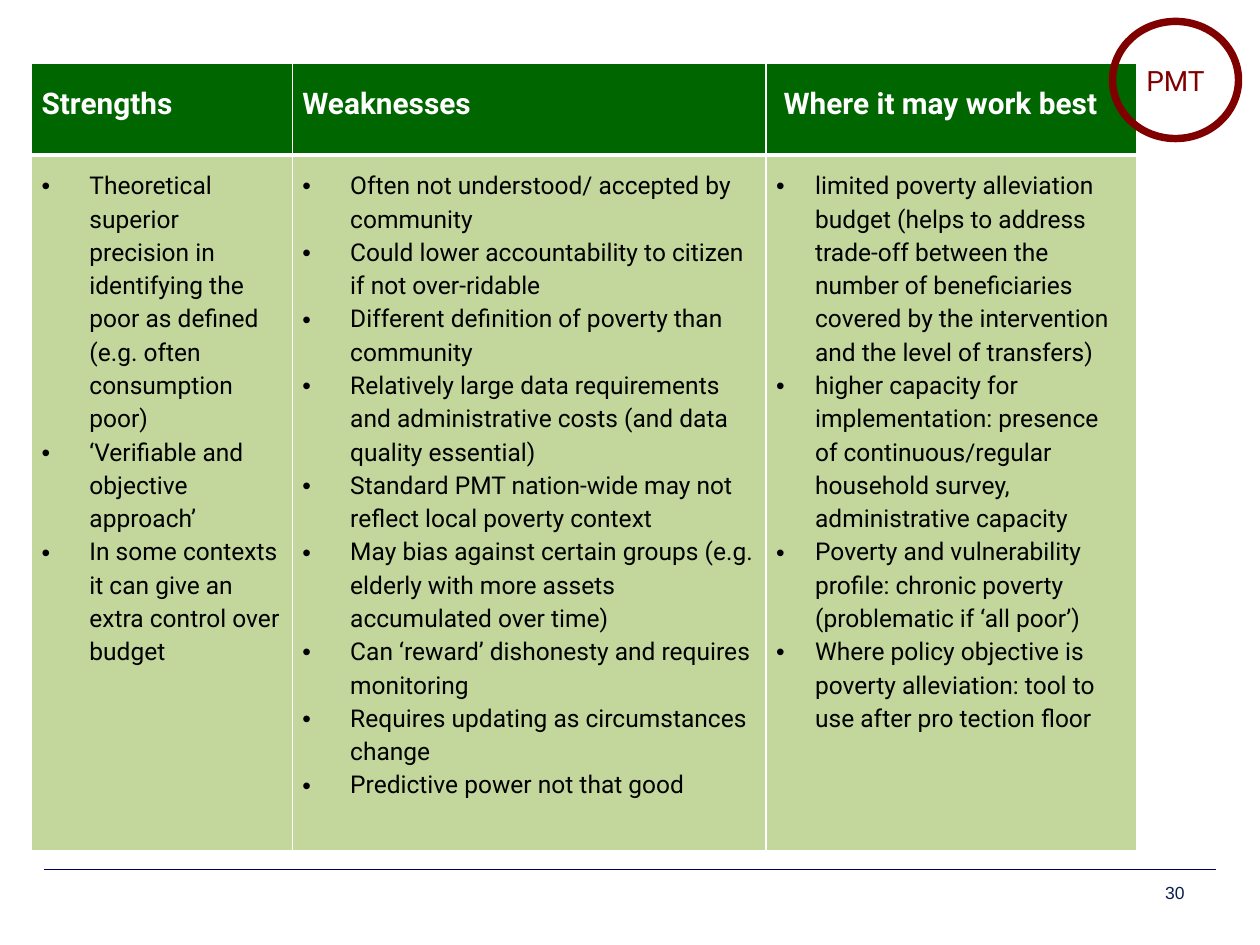
from dataclasses import dataclass

from lxml import etree
from pptx import Presentation
from pptx.dml.color import RGBColor
from pptx.enum.shapes import MSO_CONNECTOR, MSO_SHAPE
from pptx.enum.text import MSO_ANCHOR, PP_ALIGN
from pptx.oxml.ns import qn
from pptx.util import Inches, Pt

OVAL = MSO_SHAPE.OVAL
STRAIGHT = MSO_CONNECTOR.STRAIGHT
MIDDLE = MSO_ANCHOR.MIDDLE
CENTER, RIGHT, JUSTIFY = PP_ALIGN.CENTER, PP_ALIGN.RIGHT, PP_ALIGN.JUSTIFY


@dataclass(frozen=True)
class Theme:
    font: str = "Roboto"
    plain: str = "Arial"
    white: str = "FFFFFF"
    black: str = "000000"
    green: str = "006600"
    pale: str = "C3D69B"
    maroon: str = "800000"
    navy: str = "00005E"
    number: str = "0B1F51"
    head: int = 17
    body: int = 14
    badge: int = 16
    small: int = 10
    spacing: float = 1.15


THEME = Theme()

# Title, column width, hanging indent, points
COLUMNS = [
    ("Strengths", 2.07, 0.38, [
        "Theoretical superior precision in identifying the poor as defined "
        "(e.g. often consumption poor)",
        "‘Verifiable and objective approach’",
        "In some contexts it can give an extra control over budget",
    ]),
    ("Weaknesses", 3.76, 0.38, [
        "Often not understood/ accepted by community",
        "Could lower accountability to citizen if not over-ridable",
        "Different definition of poverty than community",
        "Relatively large data requirements and administrative costs "
        "(and data quality essential)",
        "Standard PMT nation-wide may not reflect local poverty context",
        "May bias against certain groups (e.g. elderly with more assets "
        "accumulated over time)",
        "Can ‘reward’ dishonesty and requires monitoring",
        "Requires updating as circumstances change",
        "Predictive power not that good",
    ]),
    ("Where it may work best", 2.94, 0.31, [
        "limited poverty alleviation budget (helps to address trade-off "
        "between the number of beneficiaries covered by the intervention "
        "and the level of transfers)",
        "higher capacity for implementation: presence of continuous/regular "
        "household survey, administrative capacity",
        "Poverty and vulnerability profile: chronic poverty "
        "(problematic if ‘all poor’)",
        "Where policy objective is poverty alleviation: tool to use after "
        "pro tection floor",
    ]),
]
ROWS = (0.73, 5.52)


def color(code):
    return RGBColor.from_string(code)


def style(para, size, code, face=THEME.font, bold=False):
    font = para.font
    font.name, font.size, font.bold = face, Pt(size), bold
    font.color.rgb = color(code)


def indent(para, left, hang=0):
    props = para._p.get_or_add_pPr()
    props.set("marL", str(Inches(left)))
    props.set("indent", str(Inches(-hang)))
    return props


def border(cell, bottom):
    """Draw white cell edges, 1 pt except for the given bottom width."""
    props = cell._tc.get_or_add_tcPr()
    widths = {"lnL": 1, "lnR": 1, "lnT": 1, "lnB": bottom}
    for spot, (tag, width) in enumerate(widths.items()):
        edge = etree.Element(qn("a:" + tag), w=str(Pt(width)))
        fill = etree.SubElement(edge, qn("a:solidFill"))
        etree.SubElement(fill, qn("a:srgbClr"), val=THEME.white)
        props.insert(spot, edge)


def dress(cell, fill, insets, bottom=1):
    cell.fill.solid()
    cell.fill.fore_color.rgb = color(fill)
    (cell.margin_left, cell.margin_top,
     cell.margin_right, cell.margin_bottom) = map(Inches, insets)
    border(cell, bottom)


def add_head(cell, title, last):
    dress(cell, THEME.green,
          (0.08, 0.15, 0, 0) if last else (0.08, 0.15, 0.07, 0.03), bottom=3)
    para = cell.text_frame.paragraphs[0]
    para.text = title
    para.line_spacing = THEME.spacing
    if last:
        indent(para, 0.06)
    else:
        para.alignment = JUSTIFY
    style(para, THEME.head, THEME.white, bold=True)


def add_points(cell, points, hang, last):
    dress(cell, THEME.pale, (0.08, 0.1, 0.08, 0 if last else 0.03))
    frame = cell.text_frame
    for i, point in enumerate(points):
        para = frame.add_paragraph() if i else frame.paragraphs[0]
        para.text = point
        para.line_spacing = THEME.spacing
        props = indent(para, hang, hang)
        etree.SubElement(props, qn("a:buFont"), typeface=THEME.plain)
        etree.SubElement(props, qn("a:buChar"), char="•")
        style(para, THEME.body, THEME.black)


def add_grid(slide, left, top):
    width = sum(column[1] for column in COLUMNS)
    table = slide.shapes.add_table(
        len(ROWS), len(COLUMNS), Inches(left), Inches(top),
        Inches(width), Inches(sum(ROWS))).table
    for row, height in zip(table.rows, ROWS):
        row.height = Inches(height)
    for i, (title, wide, hang, points) in enumerate(COLUMNS):
        last = i == len(COLUMNS) - 1
        table.columns[i].width = Inches(wide)
        add_head(table.cell(0, i), title, last)
        add_points(table.cell(1, i), points, hang, last)


def add_badge(slide, left, top, width, height):
    badge = slide.shapes.add_shape(
        OVAL, Inches(left), Inches(top), Inches(width), Inches(height))
    badge.shadow.inherit = False
    badge.fill.background()
    badge.line.color.rgb = color(THEME.maroon)
    badge.line.width = Pt(4.25)
    frame = badge.text_frame
    frame.vertical_anchor = MIDDLE
    frame.word_wrap = False
    para = frame.paragraphs[0]
    para.text = "PMT"
    para.alignment = CENTER
    style(para, THEME.badge, THEME.maroon)


def add_footer(slide, left, top, width):
    rule = slide.shapes.add_connector(
        STRAIGHT, Inches(left), Inches(top), Inches(left + width), Inches(top))
    rule.line.color.rgb = color(THEME.navy)
    rule.line.width = Pt(1)
    etree.SubElement(rule._element.spPr, qn("a:effectLst"))
    wide = 2.33
    box = slide.shapes.add_textbox(
        Inches(left + width - 0.15 - wide), Inches(top + 0.05),
        Inches(wide), Inches(0.26))
    frame = box.text_frame
    frame.word_wrap = True
    frame.vertical_anchor = MIDDLE
    para = frame.paragraphs[0]
    para.text = "30"
    para.alignment = RIGHT
    style(para, THEME.small, THEME.number, THEME.plain)


def main():
    deck = Presentation()
    deck.slide_width, deck.slide_height = Inches(10), Inches(7.5)
    slide = deck.slides.add_slide(deck.slide_layouts[6])
    add_footer(slide, 0.35, 6.9, 9.3)
    add_grid(slide, 0.25, 0.5)
    add_badge(slide, 8.83, 0.17, 1, 0.93)
    deck.save("out.pptx")


if __name__ == "__main__":
    main()
